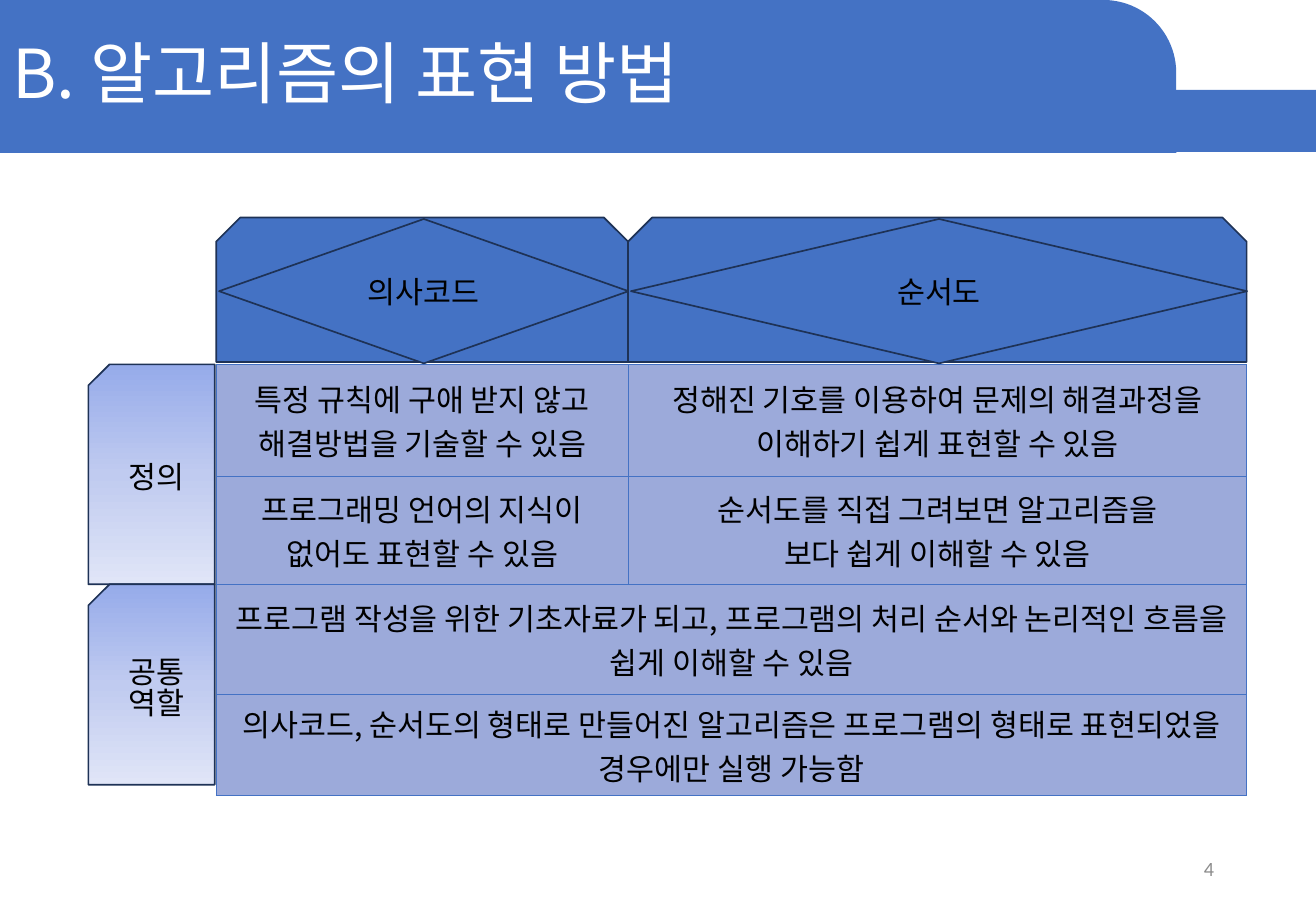
from copy import deepcopy

from lxml import etree
from pptx import Presentation
from pptx.dml.color import RGBColor
from pptx.enum import shapes, text
from pptx.oxml.ns import qn
from pptx.util import Cm, Pt

TITLE = "B. 알고리즘의 표현 방법"
PAGE = "4"
METHODS = ["의사코드", "순서도"]
# (label, rows of cells); a row with one cell spans both methods
SECTIONS = [
    ("정의", [
        ("특정 규칙에 구애 받지 않고 해결방법을 기술할 수 있음",
         "정해진 기호를 이용하여 문제의 해결과정을 이해하기 쉽게 표현할 수 있음"),
        ("프로그래밍 언어의 지식이 없어도 표현할 수 있음",
         "순서도를 직접 그려보면 알고리즘을\n보다 쉽게 이해할 수 있음"),
    ]),
    ("공통\n역할", [
        ("프로그램 작성을 위한 기초자료가 되고, 프로그램의 처리 순서와 "
         "논리적인 흐름을 쉽게 이해할 수 있음",),
        ("의사코드, 순서도의 형태로 만들어진 알고리즘은 프로그램의 형태로 "
         "표현되었을 경우에만 실행 가능함",),
    ]),
]

COLORS = {"blue": "4472C4", "outline": "1E3256", "cell": "9CAADA",
          "white": "FFFFFF", "black": "000000", "gray": "8C8C8C"}
LABEL_GRADIENT = [(0, "96ABEA"), (0.5, "C0CBF0"), (1, "E0E5F7")]
KOREAN, LATIN = "Noto Sans CJK KR", "Calibri"

# Lengths in cm
SLIDE_W, SLIDE_H = 27.51, 19.05
BANNER_H = 3.2
GRID_X, GRID_Y = 4.52, 7.62
COL_W = [8.61, 12.93]
ROW_H = [2.34, 2.26, 2.31, 1.88]
HEAD_Y, HEAD_H = 4.55, 3.02
LABEL_X, LABEL_W = 1.85, 2.64


def rgb(name):
    return RGBColor.from_string(COLORS.get(name, name))


def write(frame, content, size=18, color="black", align=text.PP_ALIGN.CENTER,
          font=KOREAN, spacing=None):
    frame.text = content
    frame.word_wrap = True
    frame.vertical_anchor = text.MSO_ANCHOR.MIDDLE
    for paragraph in frame.paragraphs:
        paragraph.alignment = align
        if spacing:
            paragraph.line_spacing = spacing
        paragraph.font.size = Pt(size)
        paragraph.font.color.rgb = rgb(color)
        paragraph.font.name = font
        etree.SubElement(paragraph.font._element, qn("a:ea"), typeface=font)


def add_block(kind, x, y, w, h, outlined=True):
    block = slide.shapes.add_shape(kind, Cm(x), Cm(y), Cm(w), Cm(h))
    block.shadow.inherit = False
    block.fill.solid()
    block.fill.fore_color.rgb = rgb("blue")
    if outlined:
        block.line.color.rgb = rgb("outline")
        block.line.width = Pt(1)
    else:
        block.line.fill.background()
    return block


def fill_label_gradient(label):
    label.fill.gradient()
    label.fill.gradient_angle = 270
    stops = label._element.spPr.find(qn("a:gradFill")).find(qn("a:gsLst"))
    stops.append(deepcopy(stops[0]))
    for stop, (position, color) in zip(label.fill.gradient_stops, LABEL_GRADIENT):
        stop.position = position
        stop.color.rgb = rgb(color)


def style_cell(cell):
    properties = cell._tc.get_or_add_tcPr()
    for side in ("lnL", "lnR", "lnT", "lnB"):
        border = etree.SubElement(properties, qn("a:" + side), w=str(Pt(0.5)))
        paint = etree.SubElement(border, qn("a:solidFill"))
        etree.SubElement(paint, qn("a:srgbClr"), val=COLORS["blue"])
    cell.fill.solid()
    cell.fill.fore_color.rgb = rgb("cell")
    cell.margin_left = cell.margin_right = Cm(0.3)
    cell.vertical_anchor = text.MSO_ANCHOR.MIDDLE


prs = Presentation()
prs.slide_width, prs.slide_height = Cm(SLIDE_W), Cm(SLIDE_H)
slide = prs.slides.add_slide(prs.slide_layouts[5])
kinds = shapes.MSO_SHAPE

# Banner, with the title in front of it
title = slide.shapes.title
strip = add_block(kinds.RECTANGLE, 0, 1.88, SLIDE_W, 1.3, outlined=False)
tab = add_block(kinds.ROUND_1_RECTANGLE, 0, 0, 24.59, BANNER_H, outlined=False)
tab.adjustments[0] = 0.476
for part in (strip, tab):
    title._element.addprevious(part._element)
title.left, title.top = Cm(0), Cm(0)
title.width, title.height = Cm(SLIDE_W), Cm(BANNER_H)
write(title.text_frame, TITLE, 40, "white", text.PP_ALIGN.LEFT, spacing=0.9)
title.text_frame.auto_size = text.MSO_AUTO_SIZE.NONE

# Table of descriptions
rows = [row for _, section in SECTIONS for row in section]
table = slide.shapes.add_table(len(rows), len(COL_W), Cm(GRID_X), Cm(GRID_Y),
                               Cm(sum(COL_W)), Cm(sum(ROW_H))).table
table.first_row = table.horz_banding = False
for column, width in zip(table.columns, COL_W):
    column.width = Cm(width)
for r, row in enumerate(rows):
    table.rows[r].height = Cm(ROW_H[r])
    for c in range(len(COL_W)):
        style_cell(table.cell(r, c))
    if len(row) == 1:
        table.cell(r, 0).merge(table.cell(r, len(COL_W) - 1))
    for c, content in enumerate(row):
        cell = table.cell(r, c)
        write(cell.text_frame, content)

# Page number
page = slide.shapes.add_textbox(Cm(19.43), Cm(17.65), Cm(6.2), Cm(1.02))
write(page.text_frame, PAGE, 12, "gray", text.PP_ALIGN.RIGHT, LATIN)

# Method headings above the columns
for c, method in enumerate(METHODS):
    x = GRID_X + sum(COL_W[:c])
    add_block(kinds.SNIP_2_SAME_RECTANGLE, x, HEAD_Y, COL_W[c], HEAD_H)
    diamond = add_block(kinds.FLOWCHART_DECISION, x + 0.06, HEAD_Y + 0.03,
                        COL_W[c] - 0.05, HEAD_H)
    write(diamond.text_frame, method)

# Section labels beside their rows
first = 0
for name, section in SECTIONS:
    last = first + len(section)
    label = add_block(kinds.SNIP_1_RECTANGLE, LABEL_X, GRID_Y + sum(ROW_H[:first]),
                      LABEL_W, sum(ROW_H[first:last]))
    label._element.spPr.find(qn("a:xfrm")).set("flipH", "1")
    fill_label_gradient(label)
    write(label.text_frame, name, spacing=0.85)
    first = last

prs.save("out.pptx")
